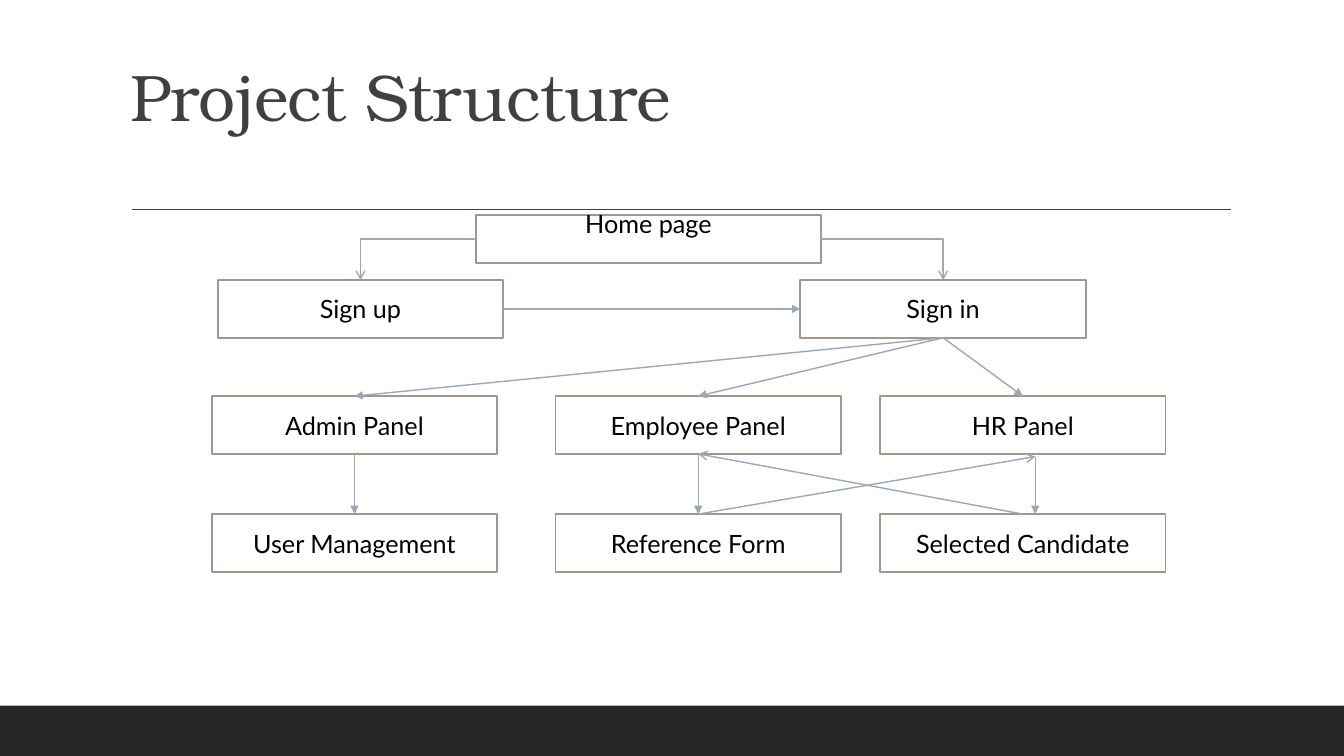
from dataclasses import dataclass
from enum import IntEnum
from typing import Union

import lxml.etree
import pptx
import pptx.dml.color
import pptx.enum.shapes
import pptx.enum.text
import pptx.oxml.ns
import pptx.presentation
import pptx.shapes.autoshape
import pptx.shapes.connector
import pptx.slide
import pptx.text.text
import pptx.util

SLIDE_WIDTH = pptx.util.Inches(13.333)
SLIDE_HEIGHT = pptx.util.Inches(7.5)


@dataclass(frozen=True)
class Theme:
    title_font: str = "TeX Gyre Bonum"
    body_font: str = "Lato"
    title_size: float = 47
    body_size: float = 18
    title_color: str = "404040"
    body_color: str = "000000"
    box_fill: str = "FFFFFF"
    box_line: str = "A0988C"
    link_color: str = "9BA8B7"
    footer_color: str = "262626"
    box_line_width: float = 1.25
    link_width: float = 1


THEME = Theme()


class Side(IntEnum):
    TOP = 0
    LEFT = 1
    BOTTOM = 2
    RIGHT = 3


@dataclass(frozen=True)
class Area:
    """Percentages of the slide's width and height."""
    left: float
    top: float
    width: float
    height: float


@dataclass(frozen=True)
class Box:
    label: str
    area: Area
    lines_below: int = 0


@dataclass(frozen=True)
class Site:
    label: str
    side: Side


@dataclass(frozen=True)
class Point:
    x: float
    y: float


@dataclass(frozen=True)
class Link:
    start: Union[Site, Point]
    end: Union[Site, Point]
    head: str = "triangle"
    elbow: bool = False


BOX_WIDTH, BOX_HEIGHT = 21.25, 7.64
SIGN_TOP = 37.04
PANEL_COLUMNS = (15.75, 41.33, 65.48)
PANEL_ROWS = (52.4, 68)
PANEL_LABELS = (
    ("Admin Panel", "Employee Panel", "HR Panel"),
    ("User Management", "Reference Form", "Selected Candidate"),
)

BOXES = [
    Box("Home page", Area(35.4, 28.4, 25.7, 6.4), lines_below=1),
    Box("Sign up", Area(16.2, SIGN_TOP, BOX_WIDTH, BOX_HEIGHT)),
    Box("Sign in", Area(59.55, SIGN_TOP, BOX_WIDTH, BOX_HEIGHT)),
] + [
    Box(label, Area(left, top, BOX_WIDTH, BOX_HEIGHT))
    for top, labels in zip(PANEL_ROWS, PANEL_LABELS)
    for left, label in zip(PANEL_COLUMNS, labels)
]

HR_PORT = Point(77.03, 60.4)
CANDIDATE_PORT = Point(HR_PORT.x, PANEL_ROWS[1])

LINKS = [
    Link(Site("Sign up", Side.RIGHT), Site("Sign in", Side.LEFT)),
    *(Link(Site("Sign in", Side.BOTTOM), Site(panel, Side.TOP)) for panel in PANEL_LABELS[0]),
    *(
        Link(Site(panel, Side.BOTTOM), Site(page, Side.TOP))
        for panel, page in list(zip(*PANEL_LABELS))[:2]
    ),
    Link(HR_PORT, CANDIDATE_PORT),
    Link(Site("Home page", Side.LEFT), Site("Sign up", Side.TOP), "arrow", elbow=True),
    Link(Site("Home page", Side.RIGHT), Site("Sign in", Side.TOP), "arrow", elbow=True),
    Link(Site("Selected Candidate", Side.TOP), Site("Employee Panel", Side.BOTTOM), "arrow"),
    Link(Site("Reference Form", Side.TOP), HR_PORT, "arrow"),
]


def across(share: float) -> int:
    return round(SLIDE_WIDTH * share / 100)


def down(share: float) -> int:
    return round(SLIDE_HEIGHT * share / 100)


def place(area: Area) -> tuple[int, int, int, int]:
    return across(area.left), down(area.top), across(area.width), down(area.height)


def rgb(color: str) -> pptx.dml.color.RGBColor:
    return pptx.dml.color.RGBColor.from_string(color)


def style_font(paragraph: pptx.text.text._Paragraph, name: str, size: float, color: str) -> None:
    paragraph.font.name = name
    paragraph.font.size = pptx.util.Pt(size)
    paragraph.font.color.rgb = rgb(color)


def add_rectangle(slide: pptx.slide.Slide, area: Area, fill: str) -> pptx.shapes.autoshape.Shape:
    shape = slide.shapes.add_shape(pptx.enum.shapes.MSO_SHAPE.RECTANGLE, *place(area))
    shape.shadow.inherit = False
    shape.fill.solid()
    shape.fill.fore_color.rgb = rgb(fill)
    shape.line.fill.background()
    return shape


def add_box(slide: pptx.slide.Slide, box: Box) -> pptx.shapes.autoshape.Shape:
    shape = add_rectangle(slide, box.area, THEME.box_fill)
    shape.line.color.rgb = rgb(THEME.box_line)
    shape.line.width = pptx.util.Pt(THEME.box_line_width)
    frame = shape.text_frame
    frame.word_wrap = True
    frame.vertical_anchor = pptx.enum.text.MSO_ANCHOR.MIDDLE
    frame.margin_bottom += pptx.util.Pt(THEME.body_size * 1.2 * box.lines_below)
    paragraph = frame.paragraphs[0]
    paragraph.text = box.label
    paragraph.alignment = pptx.enum.text.PP_ALIGN.CENTER
    style_font(paragraph, THEME.body_font, THEME.body_size, THEME.body_color)
    return shape


def add_line(
    slide: pptx.slide.Slide, start: Point, end: Point, color: str, elbow: bool = False
) -> pptx.shapes.connector.Connector:
    kinds = pptx.enum.shapes.MSO_CONNECTOR
    connector = slide.shapes.add_connector(
        kinds.ELBOW if elbow else kinds.STRAIGHT,
        across(start.x), down(start.y), across(end.x), down(end.y),
    )
    connector.line.color.rgb = rgb(color)
    connector.line.width = pptx.util.Pt(THEME.link_width)
    lxml.etree.SubElement(connector.element.spPr, pptx.oxml.ns.qn("a:effectLst"))
    return connector


def add_link(
    slide: pptx.slide.Slide, link: Link, shapes: dict[str, pptx.shapes.autoshape.Shape]
) -> None:
    start = link.start if isinstance(link.start, Point) else Point(0, 0)
    end = link.end if isinstance(link.end, Point) else Point(0, 0)
    connector = add_line(slide, start, end, THEME.link_color, link.elbow)
    if isinstance(link.start, Site):
        connector.begin_connect(shapes[link.start.label], int(link.start.side))
    if isinstance(link.end, Site):
        connector.end_connect(shapes[link.end.label], int(link.end.side))
    properties = connector.element.spPr
    if link.elbow:
        properties.find(pptx.oxml.ns.qn("a:prstGeom")).set("prst", "bentConnector2")
    outline = properties.find(pptx.oxml.ns.qn("a:ln"))
    lxml.etree.SubElement(outline, pptx.oxml.ns.qn("a:tailEnd"), type=link.head)


def add_title(slide: pptx.slide.Slide, text: str, area: Area) -> None:
    frame = slide.shapes.add_textbox(*place(area)).text_frame
    frame.word_wrap = True
    frame.vertical_anchor = pptx.enum.text.MSO_ANCHOR.BOTTOM
    paragraph = frame.paragraphs[0]
    paragraph.text = text
    paragraph.line_spacing = 0.9
    style_font(paragraph, THEME.title_font, THEME.title_size, THEME.title_color)
    paragraph.runs[0].font._element.set("spc", "-50")


def main() -> None:
    presentation = pptx.Presentation()
    presentation.slide_width = SLIDE_WIDTH
    presentation.slide_height = SLIDE_HEIGHT
    slide = presentation.slides.add_slide(presentation.slide_layouts[6])
    add_rectangle(slide, Area(0, 93.33, 100, 6.67), THEME.footer_color)
    add_line(slide, Point(9.82, 27.73), Point(91.58, 27.73), THEME.title_color)
    add_title(slide, "Project Structure", Area(9, 3.87, 82.5, 14.8))
    shapes = {box.label: add_box(slide, box) for box in BOXES}
    for link in LINKS:
        add_link(slide, link, shapes)
    presentation.save("out.pptx")


if __name__ == "__main__":
    main()
